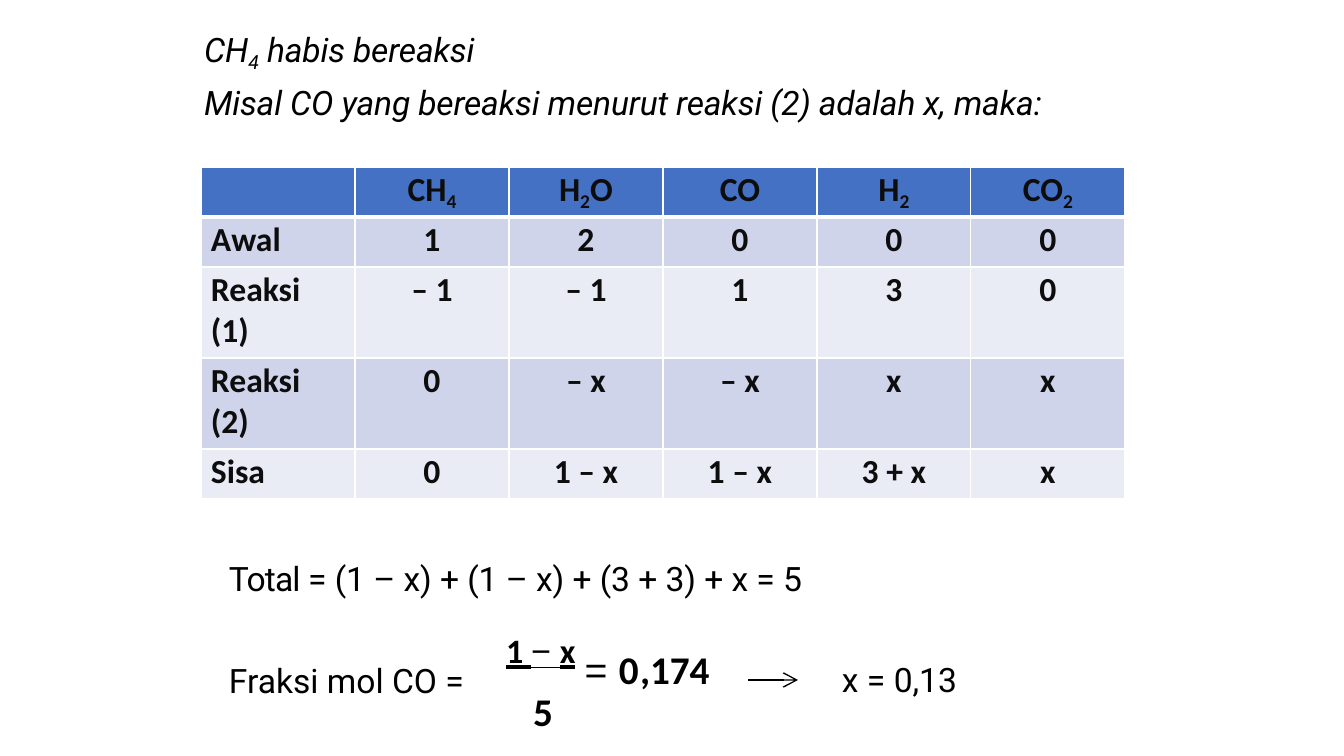
from dataclasses import dataclass

import pptx
import pptx.dml.color
import pptx.enum.shapes
import pptx.enum.text
import pptx.oxml
import pptx.oxml.ns
import pptx.util


@dataclass(frozen=True)
class Theme:
    ink: str = "000000"
    table_ink: str = "0D0D0D"
    white: str = "FFFFFF"
    header: str = "4471C4"
    bands: tuple = ("CFD4EA", "E9EBF5")
    body_font: str = "Roboto"
    table_font: str = "Calibri"
    body_size: int = 24
    fraction_size: int = 42
    result_size: int = 28
    subscript: int = -21
    numerator: int = 35


THEME = Theme()

# Content: "_" lowers the next character; a tuple line holds (text, format) runs
assumption = ["CH_4 habis bereaksi",
              "Misal CO yang bereaksi menurut reaksi (2) adalah x, maka:"]
balance = [
    ["", "CH_4", "H_2O", "CO", "H_2", "CO_2"],
    ["Awal", "1", "2", "0", "0", "0"],
    ["Reaksi\n(1)", "– 1", "– 1", "1", "3", "0"],
    ["Reaksi\n(2)", "0", "– x", "– x", "x", "x"],
    ["Sisa", "0", "1 – x", "1 – x", "3 + x", "x"],
]
total = [(("Total ", {"spacing": -0.6}),
          ("= (1 – x) + (1 – x) + (3 + 3) + x = 5", {}))]
fraction_label = ["Fraksi mol CO ="]
solution = ["x = 0,13"]

over = {"size": THEME.fraction_size, "underline": True, "base": THEME.numerator}
fraction = [
    (("1", {**over, "spacing": 0.1}),
     (" ", {**over, "spacing": -4.1}),
     ("−", {**over, "font": "Arial", "bold": False}),
     (" ", {**over, "font": "Times New Roman", "bold": False, "spacing": -3}),
     ("x", {**over, "spacing": 0.1}),
     (" ", {**over, "underline": False, "spacing": 1}),
     ("= ", {"font": "Arial", "bold": False}),
     ("0", {"spacing": 1.1}),
     (",", {"spacing": -0.7}),
     ("174", {"spacing": -0.1})),
    "5",
]

# Geometry in px
SLIDE_W, SLIDE_H = 1344, 756
TABLE_X, TABLE_Y, COLUMN_W = 201, 167, 154
ROW_H, LINE_H = 50, 41
ARROW_X, ARROW_Y, ARROW_W = 748, 680, 50


def px(length):
    return pptx.util.Emu(round(length * 914400 / 100.8))


def rgb(colour):
    return pptx.dml.color.RGBColor.from_string(colour)


def add_run(paragraph, text, font=THEME.body_font, size=THEME.body_size,
            colour=THEME.ink, bold=False, italic=False, underline=False,
            base=0, spacing=0):
    run = paragraph.add_run()
    run.text = text
    run.font.name, run.font.size = font, pptx.util.Pt(size)
    run.font.bold, run.font.italic = bold, italic
    run.font.underline = underline
    run.font.color.rgb = rgb(colour)
    properties = run._r.get_or_add_rPr()
    if base:
        properties.set("baseline", str(base * 1000))
    if spacing:
        properties.set("spc", str(round(spacing * 100)))


def write(frame, lines, align="LEFT", before=0, leading=None, indents=(), **style):
    """Fill a text frame, one paragraph per line."""
    for number, line in enumerate(lines):
        paragraph = frame.add_paragraph() if number else frame.paragraphs[0]
        paragraph.alignment = getattr(pptx.enum.text.PP_ALIGN, align)
        if number and before:
            paragraph.space_before = pptx.util.Pt(before)
        if leading:
            paragraph.line_spacing = pptx.util.Pt(leading)
        if indents:
            paragraph._p.get_or_add_pPr().set("marL", str(px(indents[number])))
        if isinstance(line, tuple):
            for text, change in line:
                add_run(paragraph, text, **{**style, **change})
            continue
        first, *lowered = line.split("_")
        add_run(paragraph, first, **style)
        for part in lowered:
            add_run(paragraph, part[0], **{**style, "base": THEME.subscript})
            if part[1:]:
                add_run(paragraph, part[1:], **style)


def add_text(slide, box, lines, top=1, **style):
    frame = slide.shapes.add_textbox(*map(px, box)).text_frame
    frame.word_wrap = True
    frame.margin_left = frame.margin_right = frame.margin_bottom = 0
    frame.margin_top = px(top)
    write(frame, lines, **style)


def add_borders(cell, widths):
    properties = cell._tc.get_or_add_tcPr()
    for side, width in widths.items():
        properties.append(pptx.oxml.parse_xml(
            f'<a:ln{side} {pptx.oxml.ns.nsdecls("a")} w="{pptx.util.Pt(width)}">'
            f'<a:solidFill><a:srgbClr val="{THEME.white}"/></a:solidFill>'
            f'</a:ln{side}>'))


def add_balance(slide):
    heights = [ROW_H + LINE_H * max(text.count("\n") for text in row)
               for row in balance]
    columns = len(balance[0])
    table = slide.shapes.add_table(
        len(balance), columns, px(TABLE_X), px(TABLE_Y),
        px(COLUMN_W * columns), px(sum(heights))).table
    table.horz_banding = False
    for column in table.columns:
        column.width = px(COLUMN_W)
    for r, row in enumerate(balance):
        table.rows[r].height = px(heights[r])
        for c, text in enumerate(row):
            cell = table.cell(r, c)
            add_borders(cell, {"L": 1, "R": 1, "T": 3 if r == 1 else 1,
                               "B": 1 if r else 3})
            cell.fill.solid()
            cell.fill.fore_color.rgb = rgb(THEME.bands[(r - 1) % 2] if r
                                           else THEME.header)
            cell.margin_left = px(0 if c else 10)
            cell.margin_right = cell.margin_bottom = 0
            cell.margin_top = px(3)
            if text:
                write(cell.text_frame, text.split("\n"),
                      align="CENTER" if c else "LEFT", bold=True,
                      font=THEME.table_font, colour=THEME.table_ink)


def add_arrow(slide):
    arrow = slide.shapes.add_connector(
        pptx.enum.shapes.MSO_CONNECTOR.STRAIGHT,
        px(ARROW_X), px(ARROW_Y), px(ARROW_X + ARROW_W), px(ARROW_Y))
    arrow.line.color.rgb = rgb(THEME.ink)
    arrow.line.width = pptx.util.Pt(1)
    namespace = pptx.oxml.ns.nsdecls("a")
    arrow.line._get_or_add_ln().append(pptx.oxml.parse_xml(
        f'<a:tailEnd {namespace} type="arrow" w="lg" len="lg"/>'))
    arrow._element.spPr.append(pptx.oxml.parse_xml(f"<a:effectLst {namespace}/>"))


def main():
    deck = pptx.Presentation()
    deck.slide_width, deck.slide_height = px(SLIDE_W), px(SLIDE_H)
    slide = deck.slides.add_slide(deck.slide_layouts[6])

    # Assumption and mole balance
    add_text(slide, (200, 19, 894, 101), assumption, top=10, before=6,
             indents=(4, 4), italic=True, spacing=-0.1)
    add_balance(slide)

    # Total, then the CO fraction solved for x
    add_text(slide, (228, 557, 589, 43), total, indents=(1,), spacing=-0.05)
    add_text(slide, (228, 659, 246, 43), fraction_label, indents=(1,))
    add_text(slide, (502, 656, 216, 80), fraction, top=2, leading=27.2,
             indents=(4, 31), font=THEME.table_font, size=THEME.result_size,
             bold=True, spacing=0.1)
    add_arrow(slide)
    add_text(slide, (841, 658, 123, 43), solution, indents=(1,))

    deck.save("out.pptx")


if __name__ == "__main__":
    main()
